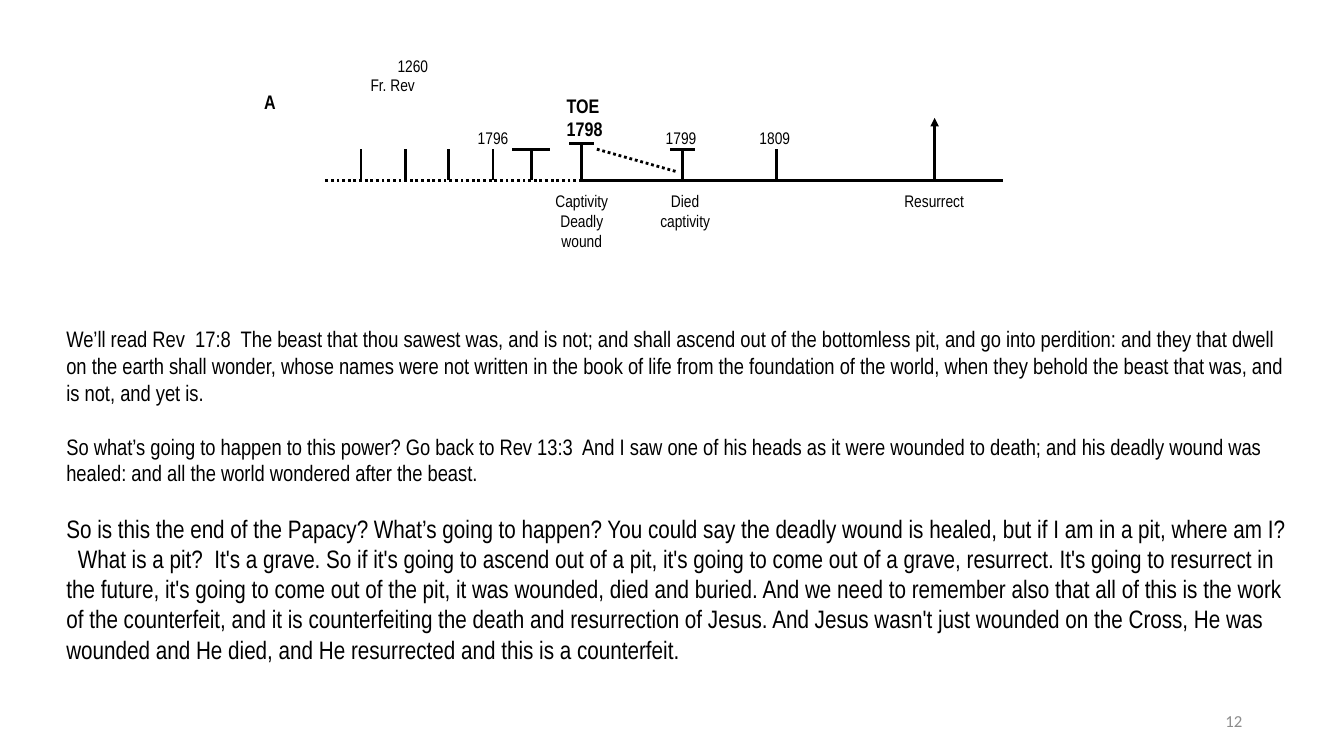
from lxml import etree
from pptx import Presentation
from pptx.dml.color import RGBColor
from pptx.enum.dml import MSO_LINE
from pptx.enum.shapes import MSO_CONNECTOR
from pptx.enum.text import MSO_ANCHOR, PP_ALIGN
from pptx.oxml.ns import qn
from pptx.util import Inches, Pt

COLORS = {"ink": "000000", "page_number": "8C8C8C"}
BODY_FONT = "Arial Narrow"

# Offsets in inches from the left end of the axis
PLAIN_TICKS = [0.38, 0.82, 1.25, 1.69, 4.5]
CAPPED_TICKS = [(2.07, 0.31, 0.38), (2.57, 0.37, 0.25), (3.57, 0.31, 0.25)]  # x, height, cap width

# Text, left and top from the axis start, width, height
LABELS = [
    ("Fr. Rev", 0.29, -1.09, 0.81, 0.22),
    ("1260", 0.41, -1.28, 0.97, 0.26),
    ("1796", 1.47, -0.56, 0.44, 0.25),
    ("1799", 3.32, -0.56, 0.47, 0.28),
    ("1809", 4.25, -0.56, 0.47, 0.28),
    ("Captivity\nDeadly wound", 2.13, 0.06, 0.88, 0.69),
    ("Died\ncaptivity", 3.25, 0.06, 0.69, 0.5),
    ("Resurrect", 5.69, 0.06, 0.75, 0.31),
]
HEADINGS = [
    ("A", -0.62, -0.94, 0.25, 0.31),
    ("TOE\n1798", 2.38, -0.9, 0.51, 0.66),
]

# Text, size
PASSAGES = [
    ("We’ll read Rev  17:8  The beast that thou sawest was, and is not; and shall ascend out of the "
     "bottomless pit, and go into perdition: and they that dwell on the earth shall wonder, whose names "
     "were not written in the book of life from the foundation of the world, when they behold the beast "
     "that was, and is not, and yet is.", 16),
    ("So what’s going to happen to this power? Go back to Rev 13:3  And I saw one of his heads as it "
     "were wounded to death; and his deadly wound was healed: and all the world wondered after the "
     "beast.", 16),
    ("So is this the end of the Papacy? What’s going to happen? You could say the deadly wound is healed, "
     "but if I am in a pit, where am I?   What is a pit?  It's a grave. So if it's going to ascend out "
     "of a pit, it's going to come out of a grave, resurrect. It's going to resurrect in the future, "
     "it's going to come out of the pit, it was wounded, died and buried. And we need to remember also "
     "that all of this is the work of the counterfeit, and it is counterfeiting the death and "
     "resurrection of Jesus. And Jesus wasn't just wounded on the Cross, He was wounded and He died, "
     "and He resurrected and this is a counterfeit.", 18),
]


def add_text(slide, box, text, size, font=BODY_FONT, color="ink", bold=False,
             align=PP_ALIGN.LEFT, inset=None):
    """Add a wrapping text box and return its text frame."""
    frame = slide.shapes.add_textbox(*map(Inches, box)).text_frame
    frame.word_wrap = True
    if inset is not None:
        frame.margin_left = frame.margin_right = Inches(inset)
        frame.margin_top = frame.margin_bottom = Inches(inset)
    frame.text = text
    for paragraph in frame.paragraphs:
        paragraph.alignment = align
        for run in paragraph.runs:
            run.font.name = font
            run.font.size = Pt(size)
            run.font.bold = bold
            run.font.color.rgb = RGBColor.from_string(COLORS[color])
    return frame


def add_line(slide, x1, y1, x2, y2, dotted=False, arrow=False):
    line = slide.shapes.add_connector(MSO_CONNECTOR.STRAIGHT, *map(Inches, (x1, y1, x2, y2)))
    line.line.color.rgb = RGBColor.from_string(COLORS["ink"])
    line.line.width = Pt(2)
    if dotted:
        line.line.dash_style = MSO_LINE.ROUND_DOT
    if arrow:
        etree.SubElement(line.line._get_or_add_ln(), qn("a:tailEnd"), type="triangle")
    etree.SubElement(line._element.spPr, qn("a:effectLst"))


def add_timeline(slide, left, axis):
    """Draw the timeline from its left end, on the height of its axis."""
    def stroke(x1, y1, x2, y2, **style):
        add_line(slide, left + x1, axis + y1, left + x2, axis + y2, **style)

    stroke(2.57, 0, 0, 0, dotted=True)
    stroke(2.57, 0, 6.75, 0)
    for x in PLAIN_TICKS:
        stroke(x, -0.31, x, 0)
    for x, height, cap in CAPPED_TICKS:
        stroke(x, -height, x, 0)
        stroke(x - cap / 2, -height, x + cap / 2, -height)
    stroke(2.72, -0.31, 3.5, -0.09, dotted=True)
    stroke(6.07, 0, 6.07, -0.62, arrow=True)

    for text, x, y, width, height in LABELS:
        add_text(slide, (left + x, axis + y, width, height), text, 12,
                 align=PP_ALIGN.CENTER, inset=0.04)
    for text, x, y, width, height in HEADINGS:
        add_text(slide, (left + x, axis + y, width, height), text, 14, bold=True, inset=0.04)


def add_passages(slide, box):
    frame = add_text(slide, box, "\n".join(text for text, _ in PASSAGES), 16)
    for index, (paragraph, (_, size)) in enumerate(zip(frame.paragraphs, PASSAGES)):
        paragraph.space_before = Pt(19 if index else 0)
        paragraph.runs[0].font.size = Pt(size)


def add_page_number(slide, box):
    frame = add_text(slide, box, "12", 12, font="Calibri", color="page_number", align=PP_ALIGN.RIGHT)
    frame.vertical_anchor = MSO_ANCHOR.MIDDLE


def main():
    deck = Presentation()
    deck.slide_width, deck.slide_height = Inches(13.33), Inches(7.5)
    slide = deck.slides.add_slide(deck.slide_layouts[6])
    add_timeline(slide, left=3.2, axis=1.79)
    add_passages(slide, (0.56, 3.18, 12.34, 3.5))
    add_page_number(slide, (9.42, 6.95, 3, 0.4))
    deck.save("out.pptx")


if __name__ == "__main__":
    main()
